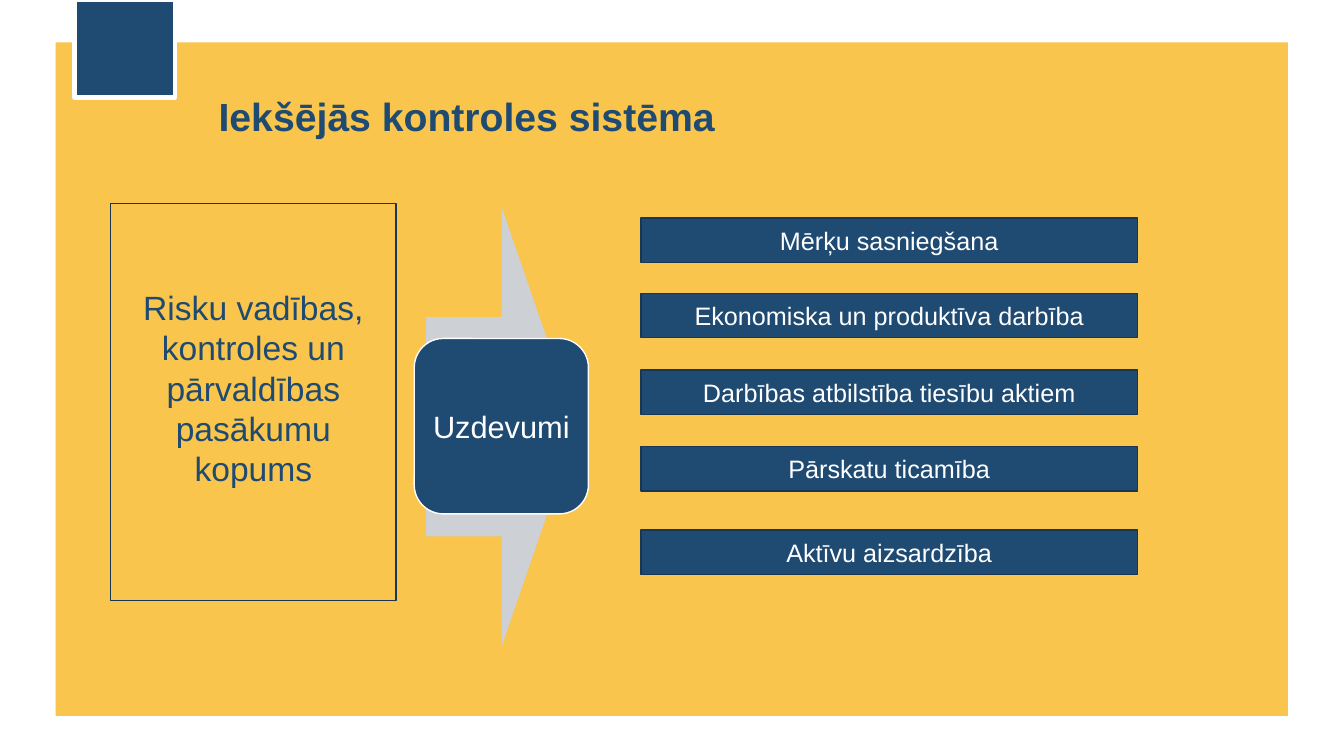
import pptx
import pptx.util
import pptx.dml.color
import pptx.enum.shapes
import pptx.enum.text

Cm, Pt = pptx.util.Cm, pptx.util.Pt
RGBColor = pptx.dml.color.RGBColor
MSO_SHAPE = pptx.enum.shapes.MSO_SHAPE
PP_ALIGN = pptx.enum.text.PP_ALIGN
MSO_ANCHOR = pptx.enum.text.MSO_ANCHOR

YELLOW = RGBColor(0xF9, 0xC5, 0x4C)
BLUE = RGBColor(0x1F, 0x4A, 0x72)
DARK_BLUE = RGBColor(0x17, 0x37, 0x54)
GREY = RGBColor(0xCD, 0xD0, 0xD5)
WHITE = RGBColor(0xFF, 0xFF, 0xFF)

prs = pptx.Presentation()
prs.slide_width, prs.slide_height = Cm(33.87), Cm(19.05)
s = prs.slides.add_slide(prs.slide_layouts[6])


def add_block(kind, left, top, width, height, fill, line=None, line_width=1):
    sp = s.shapes.add_shape(kind, Cm(left), Cm(top), Cm(width), Cm(height))
    sp.shadow.inherit = False
    sp.fill.solid()
    sp.fill.fore_color.rgb = fill
    if line is None:
        sp.line.fill.background()
    else:
        sp.line.color.rgb = line
        sp.line.width = Pt(line_width)
    return sp


def write(sp, text, size, color, align=PP_ALIGN.CENTER, anchor=MSO_ANCHOR.MIDDLE, bold=False):
    tf = sp.text_frame
    tf.word_wrap = True
    tf.vertical_anchor = anchor
    p = tf.paragraphs[0]
    p.alignment = align
    r = p.add_run()
    r.text = text
    r.font.name = "Arial"
    r.font.size = Pt(size)
    r.font.bold = bold
    r.font.color.rgb = color


# Background panel and corner square
add_block(MSO_SHAPE.RECTANGLE, 1.4, 1.07, 31.06, 16.97, YELLOW)
add_block(MSO_SHAPE.RECTANGLE, 1.88, 0, 2.54, 2.46, BLUE, WHITE, 3)

# Title
title = s.shapes.add_textbox(Cm(5.26), Cm(2.2), Cm(26.24), Cm(2.57))
write(title, "Iekšējās kontroles sistēma", 28, BLUE, PP_ALIGN.JUSTIFY, MSO_ANCHOR.TOP, True)

# Definition box, with its text slightly above the middle
definition = add_block(MSO_SHAPE.RECTANGLE, 2.79, 5.13, 7.19, 10.01, YELLOW, DARK_BLUE)
definition.text_frame.margin_bottom = Cm(0.86)
write(definition, "Risku vadības, kontroles un pārvaldības pasākumu kopums", 24, BLUE)

# Arrow with the tasks label
add_block(MSO_SHAPE.RIGHT_ARROW, 10.74, 5.23, 3.81, 11.05, GREY)
tasks = add_block(MSO_SHAPE.ROUNDED_RECTANGLE, 10.44, 8.53, 4.39, 4.42, BLUE, WHITE)
tasks.text_frame.margin_left = tasks.text_frame.margin_right = Cm(0.23)
write(tasks, "Uzdevumi", 22, WHITE)

# Task bars
bars = [
    (5.49, "Mērķu sasniegšana"),
    (7.39, "Ekonomiska un produktīva darbība"),
    (9.32, "Darbības atbilstība tiesību aktiem"),
    (11.25, "Pārskatu ticamība"),
    (13.36, "Aktīvu aizsardzība"),
]
for top, text in bars:
    bar = add_block(MSO_SHAPE.RECTANGLE, 16.15, top, 12.52, 1.12, BLUE, DARK_BLUE)
    write(bar, text, 18, WHITE)

prs.save("out.pptx")
